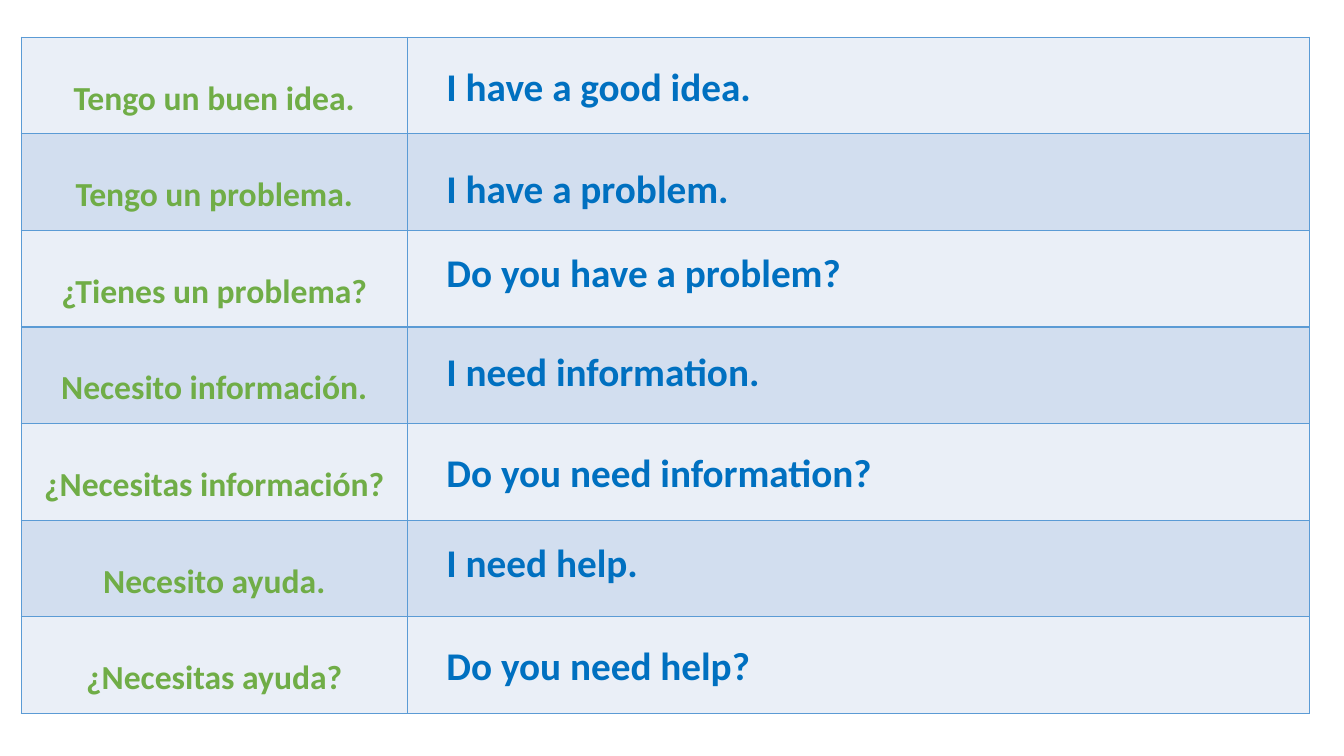
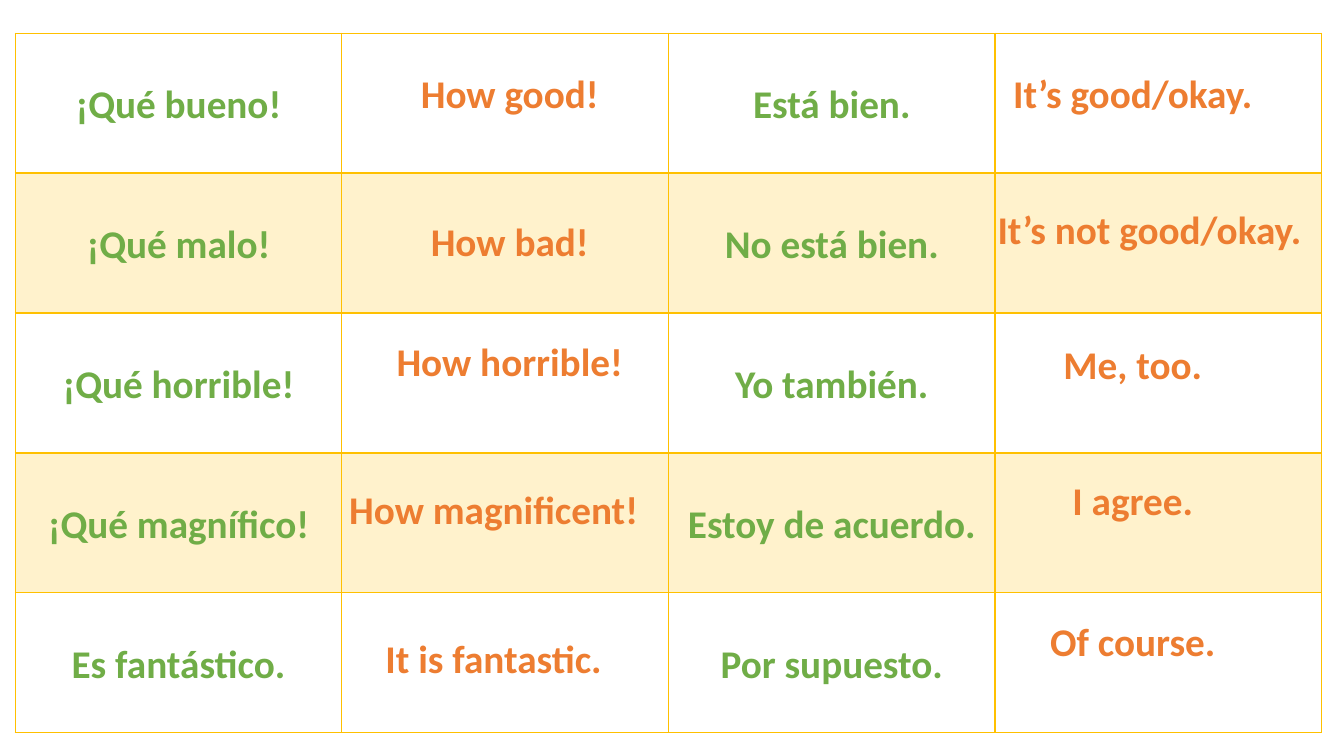
"""Build two slides of Spanish phrases with their English meanings."""
from lxml import etree
from pptx import Presentation
from pptx.dml.color import RGBColor
from pptx.enum.text import MSO_AUTO_SIZE, PP_ALIGN
from pptx.oxml.ns import qn
from pptx.util import Inches, Pt

LEFT, CENTER = PP_ALIGN.LEFT, PP_ALIGN.CENTER
GROW = MSO_AUTO_SIZE.SHAPE_TO_FIT_TEXT
FONT = "Calibri"
GREEN = RGBColor(0x70, 0xAD, 0x47)
BLUE = RGBColor(0x00, 0x70, 0xC0)
ORANGE = RGBColor(0xED, 0x7D, 0x31)
SKY = RGBColor(0x5B, 0x9B, 0xD5)
PALE = RGBColor(0xEA, 0xEF, 0xF7)
MIST = RGBColor(0xD2, 0xDE, 0xEF)
GOLD = RGBColor(0xFF, 0xC0, 0x00)
CREAM = RGBColor(0xFF, 0xF2, 0xCC)

NEEDS = [
    ("Tengo un buen idea.", ""),
    ("Tengo un problema.", ""),
    ("¿Tienes un problema?", ""),
    ("Necesito información.", ""),
    ("¿Necesitas información?", ""),
    ("Necesito ayuda.", ""),
    ("¿Necesitas ayuda?", ""),
]
NEEDS_EN = [
    ("I have a good idea.", 0.57),
    ("I have a problem.", 1.58),
    ("Do you have a problem?", 2.41),
    ("I need information.", 3.4),
    ("Do you need information?", 4.4),
    ("I need help.", 5.29),
    ("Do you need help?", 6.31),
]
VIEWS = [
    ("¡Qué bueno!", "", "Está bien.", ""),
    ("¡Qué malo!", "", "No está bien.", ""),
    ("¡Qué horrible!", "", "Yo también.", ""),
    ("¡Qué magnífico!", "", "Estoy de acuerdo.", ""),
    ("Es fantástico.", "", "Por supuesto.", ""),
]
VIEWS_EN = [
    ("How good!", 3.48, 0.64, 3.15),
    ("How bad!", 3.48, 2.11, 3.15),
    ("How horrible!", 3.48, 3.3, 3.15),
    ("How magnificent!", 3.32, 4.77, 3.15),
    ("It is fantastic.", 3.32, 6.24, 3.15),
    ("It’s good/okay.", 9.66, 0.64, 3.15),
    ("It’s not good/okay.", 9.66, 1.99, 3.48),
    ("Me, too.", 9.66, 3.33, 3.15),
    ("I agree.", 9.66, 4.68, 3.15),
    ("Of course.", 9.66, 6.08, 3.15),
]


def write(frame, text, size, color, align):
    frame.text = text
    para = frame.paragraphs[0]
    para.alignment = align
    for run in para.runs:
        font = run.font
        font.name, font.size, font.bold = FONT, Pt(size), True
        font.color.rgb = color
    return para


def edge(cell, side, color, width):
    props = cell._tc.get_or_add_tcPr()
    line = etree.SubElement(props, qn("a:ln" + side), w=str(Pt(width)))
    fill = etree.SubElement(line, qn("a:solidFill"))
    etree.SubElement(fill, qn("a:srgbClr"), val=str(color))


def paint(cell, color):
    if color is None:
        cell.fill.background()
    else:
        cell.fill.solid()
        cell.fill.fore_color.rgb = color


def add_grid(slide, rows, place, cols, size, line, bands, rule=1):
    left, top, width, height = map(Inches, place)
    frame = slide.shapes.add_table(len(rows), len(cols), left, top, width, height)
    table = frame.table
    table.first_row = table.horz_banding = False
    for col, span in zip(table.columns, cols):
        col.width = Inches(span)
    for i, texts in enumerate(rows):
        table.rows[i].height = Inches(place[3] / len(rows))
        for j, text in enumerate(texts):
            cell = table.cell(i, j)
            cell.margin_left = cell.margin_right = Inches(0.07)
            cell.margin_top = cell.margin_bottom = 0
            if text:
                para = write(cell.text_frame, text, size, GREEN, CENTER)
                para.line_spacing = 2.0
            for side in "LRTB":
                thick = (side, i) in (("B", 0), ("T", 1))
                edge(cell, side, line, rule if thick else 1)
            paint(cell, bands[i % 2])


def add_text(slide, text, left, top, width, color, align):
    box = slide.shapes.add_textbox(*map(Inches, (left, top, width, 0.57)))
    frame = box.text_frame
    frame.word_wrap = True
    frame.auto_size = GROW
    write(frame, text, 28, color, align)


def add_needs(slide):
    add_grid(slide, NEEDS, (0.21, 0.37, 12.78, 6.71), (3.83, 8.95), 24, SKY, (PALE, MIST))
    for text, top in NEEDS_EN:
        add_text(slide, text, 4.33, top, 8.06, BLUE, LEFT)


def add_views(slide):
    add_grid(slide, VIEWS, (0.15, 0.33, 12.96, 6.94), [3.24] * 4, 28, GOLD, (None, CREAM), 2)
    for text, left, top, width in VIEWS_EN:
        add_text(slide, text, left, top, width, ORANGE, CENTER)


def main():
    deck = Presentation()
    deck.slide_width, deck.slide_height = Inches(13.33), Inches(7.5)
    for build in (add_needs, add_views):
        build(deck.slides.add_slide(deck.slide_layouts[6]))
    deck.save("out.pptx")


if __name__ == "__main__":
    main()
